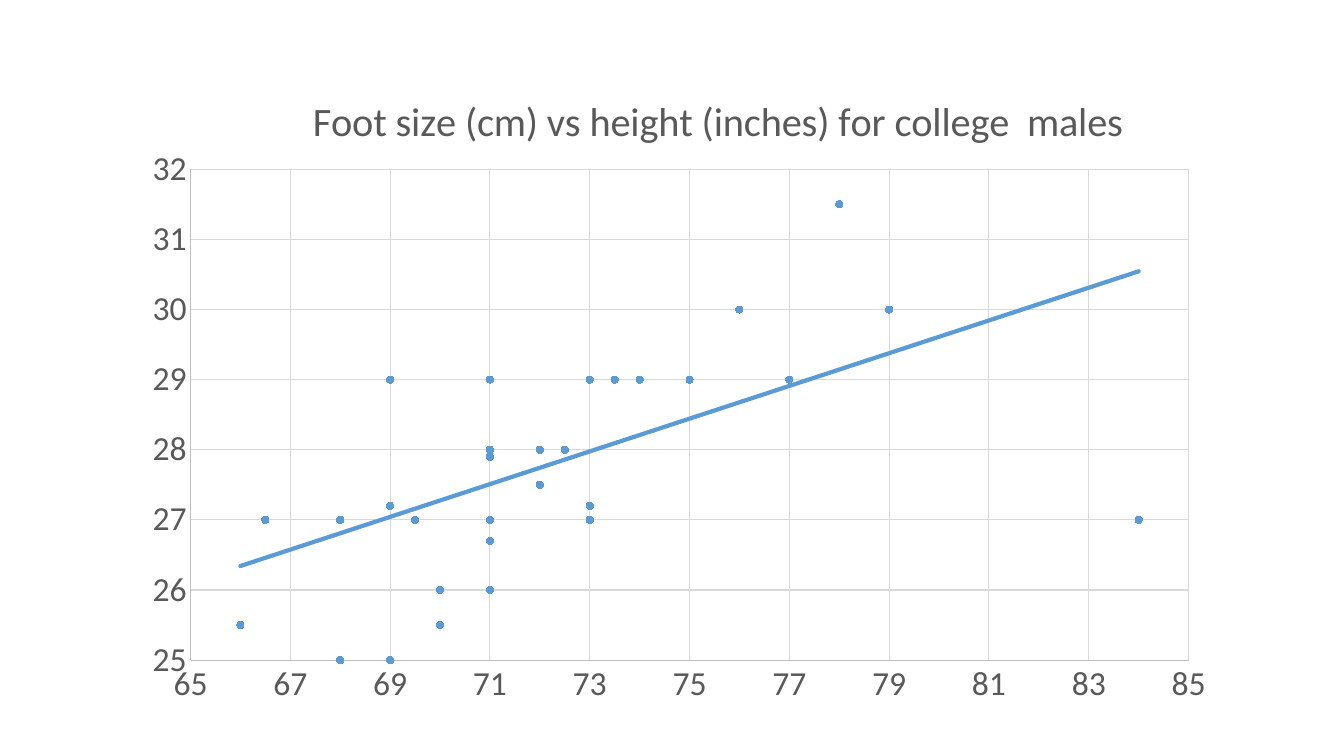
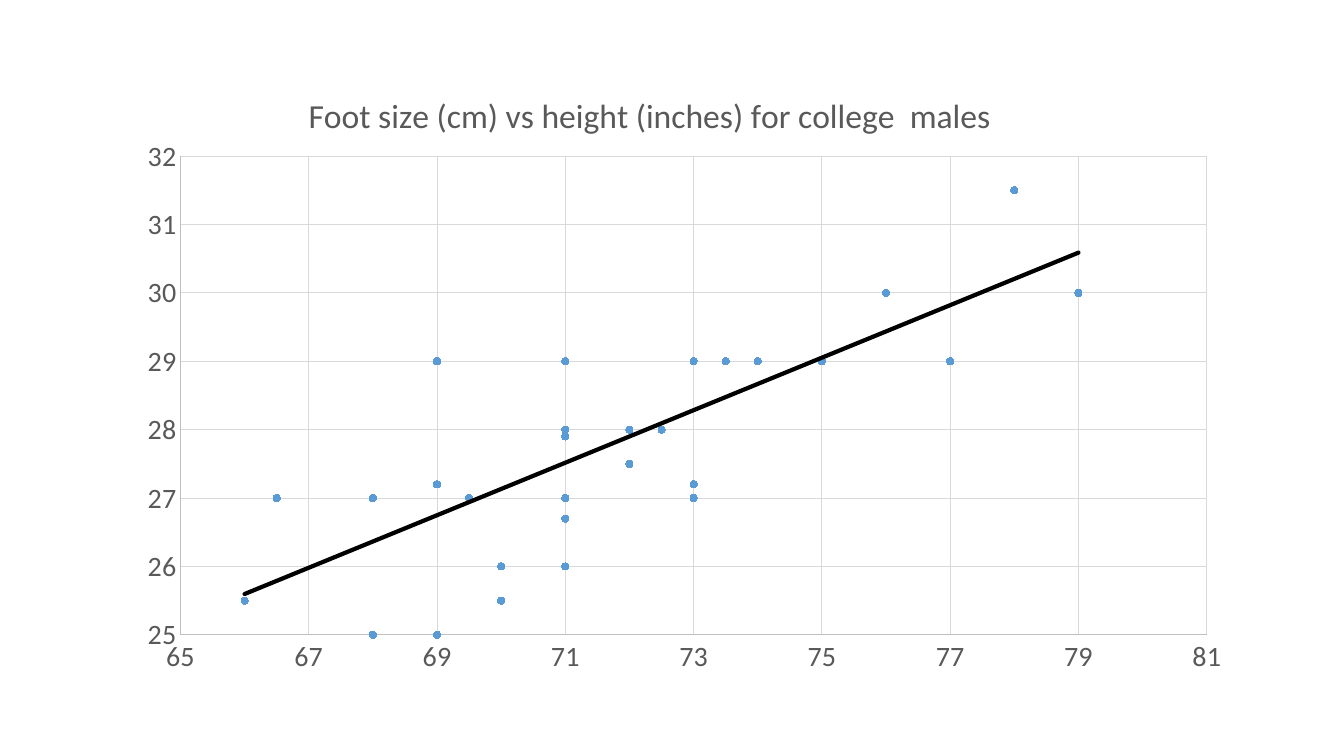
from dataclasses import dataclass

from lxml.etree import SubElement
from pptx import Presentation
from pptx.chart.data import XyChartData
from pptx.dml.color import RGBColor
from pptx.enum.chart import XL_CHART_TYPE, XL_MARKER_STYLE, XL_TICK_MARK
from pptx.oxml import parse_xml
from pptx.oxml.ns import nsdecls, qn
from pptx.util import Inches, Pt


@dataclass(frozen=True)
class Theme:
    font: str = "Calibri"
    text: str = "595959"
    grid: str = "D9D9D9"
    axis: str = "BFBFBF"
    accent: str = "5B9BD5"
    black: str = "000000"
    thin: float = 0.75
    trend: float = 3
    marker: int = 5
    title_scale: float = 1.2
    large: int = 24
    medium: int = 20


@dataclass(frozen=True)
class ScatterLayout:
    """Boxes are left, top, width and height in inches on the slide."""
    frame: tuple
    plot: tuple
    title_corner: tuple
    size: int
    height_max: int
    trend_color: str


THEME = Theme()
TITLE = "Foot size (cm) vs height (inches) for college  males"
HEIGHT_MIN, HEIGHT_STEP = 65, 2
FOOT_MIN, FOOT_MAX, FOOT_STEP = 25, 32, 1
OUTLIER = (84, 27)
MALES = [
    (66.5, 27), (74, 29), (70, 25.5), (71, 27.9), (73, 27), (71, 26), (71, 29),
    (69.5, 27), (73, 29), (71, 27), (69, 29), (69, 27.2), (73, 29), (75, 29),
    (73, 27.2), (72, 27.5), (69, 25), (68, 25), (72, 28), (78, 31.5), (79, 30),
    (71, 28), (73.5, 29), (66, 25.5), (71, 26.7), (71, 29), (71, 28), OUTLIER,
    (77, 29), (72.5, 28), (70, 26), (76, 30), (68, 27),
]
WITH_OUTLIER = ScatterLayout(
    frame=(1.3, 0.43, 10.88, 6.7), plot=(1.89, 1.68, 9.9, 4.87),
    title_corner=(3.03, 0.86), size=THEME.large, height_max=85,
    trend_color=THEME.accent)
WITHOUT_OUTLIER = ScatterLayout(
    frame=(1.24, 0.47, 11.1, 6.34), plot=(1.79, 1.55, 10.18, 4.75),
    title_corner=(3, 0.86), size=THEME.medium, height_max=81,
    trend_color=THEME.black)


def style_font(font, *, size, color=THEME.text):
    font.name = THEME.font
    font.size = Pt(size)
    font.bold = False
    font.color.rgb = RGBColor.from_string(color)


def style_line(line, color, width=THEME.thin):
    line.color.rgb = RGBColor.from_string(color)
    line.width = Pt(width)


def write_text(text_frame, text, **text_format):
    text_frame.text = text
    style_font(text_frame.paragraphs[0].runs[0].font, **text_format)


def place(parent, index, frame, box, inner=False):
    """Fix a chart part at a slide position, as fractions of the chart frame."""
    for old in parent.findall(qn("c:layout")):
        parent.remove(old)
    layout = parse_xml(f"<c:layout {nsdecls('c')}><c:manualLayout/></c:layout>")
    manual = layout[0]
    if inner:
        SubElement(manual, qn("c:layoutTarget"), val="inner")
    for axis in "xy":
        SubElement(manual, qn(f"c:{axis}Mode"), val="edge")
    left, top, width, height = frame
    values = [(box[0] - left) / width, (box[1] - top) / height]
    values += [part / whole for part, whole in zip(box[2:], (width, height))]
    for name, value in zip("xywh", values):
        SubElement(manual, qn(f"c:{name}"), val=f"{value:.4f}")
    parent.insert(index, layout)


def style_axis(axis, low, high, step, size):
    axis.minimum_scale, axis.maximum_scale, axis.major_unit = low, high, step
    axis.major_tick_mark = axis.minor_tick_mark = XL_TICK_MARK.NONE
    axis.has_major_gridlines = True
    style_line(axis.major_gridlines.format.line, THEME.grid)
    style_line(axis.format.line, THEME.axis)
    style_font(axis.tick_labels.font, size=size)


def style_points(series):
    series.format.line.fill.background()
    marker = series.marker
    marker.style = XL_MARKER_STYLE.CIRCLE
    marker.size = THEME.marker
    marker.format.fill.solid()
    marker.format.fill.fore_color.rgb = RGBColor.from_string(THEME.accent)
    style_line(marker.format.line, THEME.accent)


def add_trend(series, color):
    trend = parse_xml(
        f'<c:trendline {nsdecls("c", "a")}><c:spPr>'
        f'<a:ln w="{Pt(THEME.trend)}" cap="rnd"><a:solidFill>'
        f'<a:srgbClr val="{color}"/></a:solidFill></a:ln></c:spPr>'
        '<c:trendlineType val="linear"/><c:dispRSqr val="0"/>'
        '<c:dispEq val="0"/></c:trendline>')
    series._element.find(qn("c:xVal")).addprevious(trend)


def add_scatter(page, points, layout):
    data = XyChartData()
    values = data.add_series("Series 1")
    for height, foot in points:
        values.add_data_point(height, foot)
    chart = page.shapes.add_chart(
        XL_CHART_TYPE.XY_SCATTER, *map(Inches, layout.frame), data).chart
    style_font(chart.font, size=layout.size, color=THEME.black)
    chart.has_legend = False
    chart.has_title = True
    write_text(chart.chart_title.text_frame, TITLE,
               size=layout.size * THEME.title_scale)
    chart.chart_title.include_in_layout = False
    place(chart.chart_title._element, 1, layout.frame, layout.title_corner)
    plot = chart.plots[0]
    plot.vary_by_categories = False
    place(plot._element.getparent(), 0, layout.frame, layout.plot, inner=True)
    style_axis(chart.category_axis, HEIGHT_MIN, layout.height_max, HEIGHT_STEP,
               layout.size)
    style_axis(chart.value_axis, FOOT_MIN, FOOT_MAX, FOOT_STEP, layout.size)
    style_points(plot.series[0])
    add_trend(plot.series[0], layout.trend_color)


def main():
    deck = Presentation()
    deck.slide_width, deck.slide_height = Inches(13.33), Inches(7.5)
    typical = [point for point in MALES if point != OUTLIER]
    for points, layout in ((MALES, WITH_OUTLIER), (typical, WITHOUT_OUTLIER)):
        page = deck.slides.add_slide(deck.slide_layouts[6])
        add_scatter(page, points, layout)
    deck.save("out.pptx")


if __name__ == "__main__":
    main()
